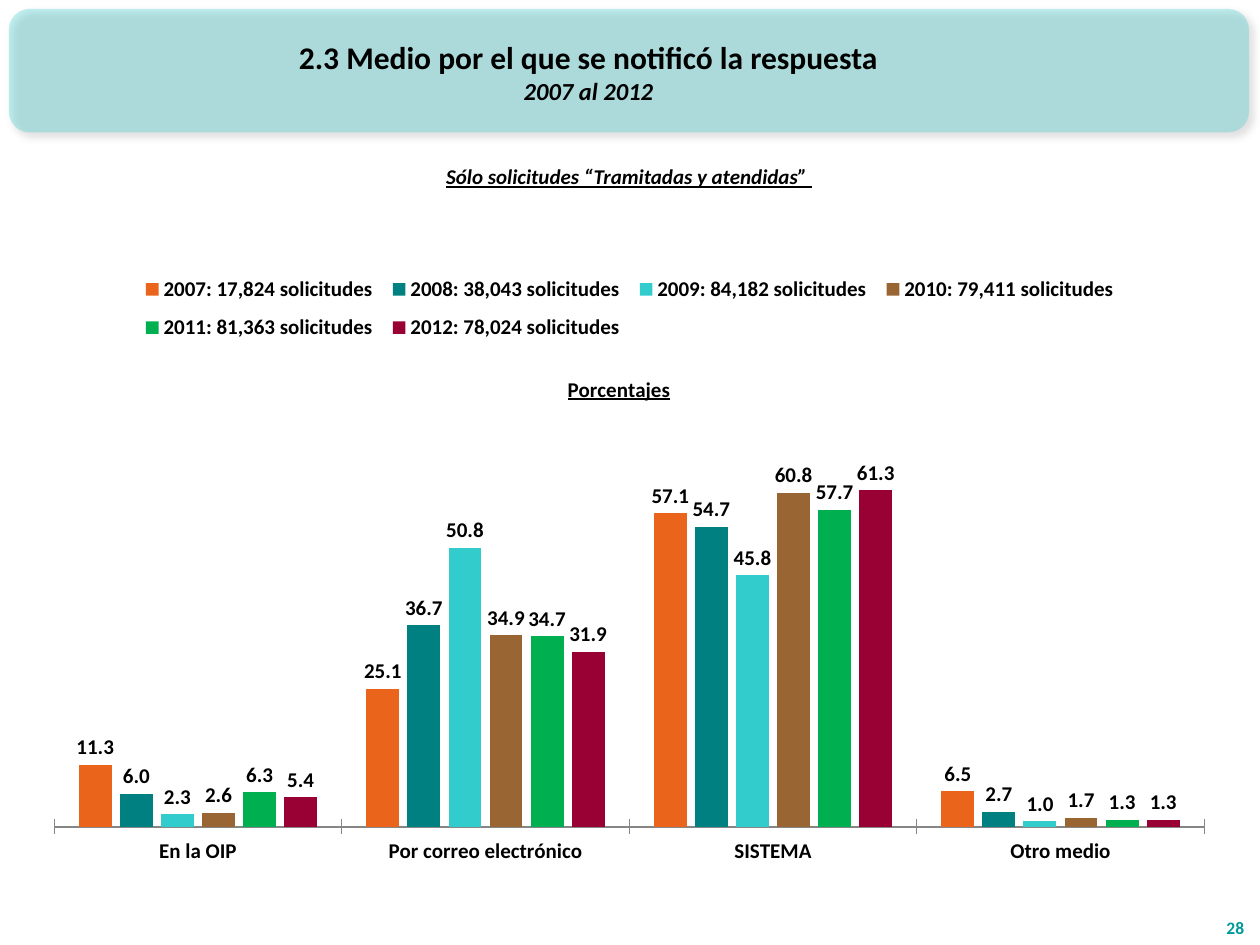
from lxml import etree
from pptx import Presentation
from pptx.chart.data import CategoryChartData
from pptx.dml.color import RGBColor
from pptx.enum.chart import XL_CHART_TYPE, XL_LABEL_POSITION, XL_LEGEND_POSITION, XL_TICK_MARK
from pptx.enum.shapes import MSO_SHAPE
from pptx.enum.text import MSO_ANCHOR, PP_ALIGN
from pptx.oxml import parse_xml
from pptx.oxml.ns import nsdecls, qn
from pptx.util import Cm, Pt

BLACK = RGBColor(0x00, 0x00, 0x00)
TURQUOISE = RGBColor(0x33, 0xCC, 0xCC)
TEAL = RGBColor(0x00, 0x99, 0x99)
AXIS_GRAY = RGBColor(0x86, 0x86, 0x86)
FONT = "Calibri"

CATEGORIES = ["En la OIP", "Por correo electrónico", "SISTEMA", "Otro medio"]
YEARS = [
    ("2007: 17,824 solicitudes", (11.3, 25.1, 57.1, 6.5), RGBColor(0xEB, 0x64, 0x1B)),
    ("2008: 38,043 solicitudes", (6.0, 36.7, 54.7, 2.7), RGBColor(0x00, 0x80, 0x80)),
    ("2009: 84,182 solicitudes", (2.3, 50.8, 45.8, 1.0), TURQUOISE),
    ("2010: 79,411 solicitudes", (2.6, 34.9, 60.8, 1.7), RGBColor(0x99, 0x66, 0x33)),
    ("2011: 81,363 solicitudes", (6.3, 34.7, 57.7, 1.3), RGBColor(0x00, 0xB0, 0x50)),
    ("2012: 78,024 solicitudes", (5.4, 31.9, 61.3, 1.3), RGBColor(0x99, 0x00, 0x33)),
]


def add_text(slide, box, lines, align, anchor, color=BLACK):
    """Add a text box; each line is (text, size, italic, underline)."""
    frame = slide.shapes.add_textbox(*[Cm(length) for length in box]).text_frame
    frame.word_wrap = True
    frame.vertical_anchor = anchor
    for index, (text, size, italic, underline) in enumerate(lines):
        paragraph = frame.paragraphs[0] if index == 0 else frame.add_paragraph()
        paragraph.alignment = align
        run = paragraph.add_run()
        run.text = text
        font = run.font
        font.name, font.size, font.bold = FONT, Pt(size), True
        font.italic, font.underline = italic, underline
        font.color.rgb = color


def set_layout(element, inner=False, **percents):
    """Place a chart part by x, y, w and h in percent of the chart's size."""
    for old_layout in element.findall(qn("c:layout")):
        element.remove(old_layout)
    layout = parse_xml(f"<c:layout {nsdecls('c')}><c:manualLayout/></c:layout>")
    values = [("layoutTarget", "inner")] if inner else []
    values += [("xMode", "edge"), ("yMode", "edge")]
    values += [(tag, percent / 100) for tag, percent in percents.items()]
    for tag, value in values:
        etree.SubElement(layout[0], qn(f"c:{tag}")).set("val", str(value))
    # The layout follows the title's text or the legend's position
    leaders = [child for child in element if child.tag in (qn("c:tx"), qn("c:legendPos"))]
    element.insert(len(leaders), layout)


presentation = Presentation()
presentation.slide_width = Cm(25.4)
presentation.slide_height = Cm(19.05)
slide = presentation.slides.add_slide(presentation.slide_layouts[6])

# Header banner
banner = slide.shapes.add_shape(
    MSO_SHAPE.ROUNDED_RECTANGLE, Cm(0.18), Cm(0.18), Cm(25), Cm(2.49))
banner.fill.solid()
banner.fill.fore_color.rgb = TURQUOISE
color_element = banner._element.spPr.find(qn("a:solidFill"))[0]
etree.SubElement(color_element, qn("a:alpha")).set("val", "30000")
banner.line.fill.background()
banner._element.spPr.append(parse_xml(
    f'<a:effectLst {nsdecls("a")}><a:outerShdw blurRad="{Pt(4)}" dist="{Pt(3)}" '
    'dir="2700000" algn="tl" rotWithShape="0"><a:srgbClr val="000000">'
    '<a:alpha val="40000"/></a:srgbClr></a:outerShdw></a:effectLst>'))

add_text(slide, (0.22, 0.25, 23.29, 2.39),
         [("2.3 Medio por el que se notificó la respuesta", 18, False, False),
          ("2007 al 2012", 14, True, False)],
         PP_ALIGN.CENTER, MSO_ANCHOR.MIDDLE)
add_text(slide, (1.8, 3.18, 21.77, 0.76),
         [("Sólo solicitudes “Tramitadas y atendidas” ", 12, True, True)],
         PP_ALIGN.CENTER, MSO_ANCHOR.TOP)
add_text(slide, (24.31, 18.01, 1.02, 1.02), [("28", 10, False, False)],
         PP_ALIGN.RIGHT, MSO_ANCHOR.BOTTOM, TEAL)

# Chart of percentages
chart_data = CategoryChartData(number_format="0.0")
chart_data.categories = CATEGORIES
for name, values, _ in YEARS:
    chart_data.add_series(name, values)
chart = slide.shapes.add_chart(
    XL_CHART_TYPE.COLUMN_CLUSTERED, Cm(0.71), Cm(5.05), Cm(24), Cm(13), chart_data).chart
chart.font.name, chart.font.size, chart.font.bold = FONT, Pt(12), True
chart.font.color.rgb = BLACK

chart.has_title = True
title_run = chart.chart_title.text_frame.paragraphs[0].add_run()
title_run.text = "Porcentajes"
title_font = title_run.font
title_font.name, title_font.size = FONT, Pt(12)
title_font.bold = title_font.underline = True
title_font.color.rgb = BLACK
chart.chart_title.include_in_layout = False

chart.has_legend = True
chart.legend.position = XL_LEGEND_POSITION.TOP
chart.legend.include_in_layout = False

plot = chart.plots[0]
plot.gap_width = 150
plot.overlap = -25
plot.vary_by_categories = False
for series, (_, _, color) in zip(plot.series, YEARS):
    series.format.fill.solid()
    series.format.fill.fore_color.rgb = color
    series.invert_if_negative = False
    labels = series.data_labels
    labels.show_value = True
    labels.number_format = "0.0"
    labels.number_format_is_linked = False
    labels.position = XL_LABEL_POSITION.OUTSIDE_END

value_axis = chart.value_axis
value_axis.minimum_scale, value_axis.maximum_scale = 0, 70
value_axis.has_major_gridlines = False
value_axis.visible = False
category_axis = chart.category_axis
category_axis.major_tick_mark = XL_TICK_MARK.CROSS
category_axis.format.line.color.rgb = AXIS_GRAY

set_layout(chart.chart_title._element, x=44.4, y=18.7)
set_layout(chart.legend._element, x=8.2, y=2, w=83.5, h=14)
set_layout(chart._chartSpace.chart.plotArea, inner=True, x=1.6, y=29.8, w=96.6, h=59.6)

presentation.save("out.pptx")
